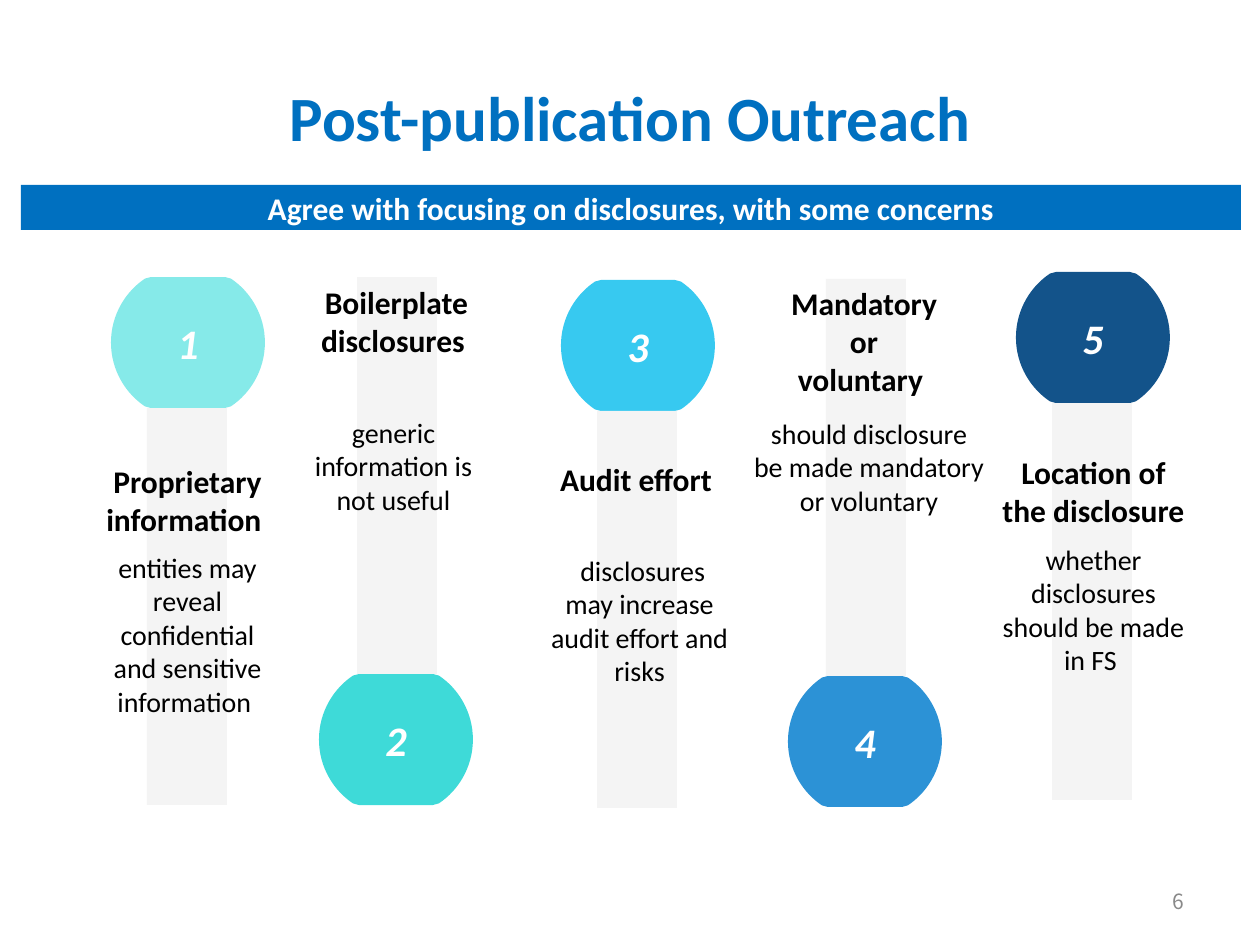
from math import acos, degrees, sqrt

from lxml.etree import SubElement
from pptx import Presentation
from pptx.dml.color import RGBColor as Rgb
from pptx.enum.shapes import MSO_SHAPE as Shape
from pptx.enum.text import MSO_ANCHOR as Anchor, PP_ALIGN as Align
from pptx.oxml.ns import qn
from pptx.util import Emu, Pt

PX = 914400 / 126
BLUE = Rgb(0x00, 0x70, 0xC0)
WHITE = Rgb(0xFF, 0xFF, 0xFF)
BLACK = Rgb(0x00, 0x00, 0x00)
PALE = Rgb(0xF4, 0xF4, 0xF4)
GREY = Rgb(0x89, 0x89, 0x89)
AQUA = Rgb(0x86, 0xEA, 0xE9)
TEAL = Rgb(0x3E, 0xDA, 0xD8)
SKY = Rgb(0x37, 0xC9, 0xF0)
AZURE = Rgb(0x2C, 0x92, 0xD6)
NAVY = Rgb(0x13, 0x53, 0x8A)

RADIUS, DISC_H = 77, 131
FLAT, BEND = 37, 43  # half widths where the flat edge ends and the arc starts
BAR_W, BAR_H = 80, 397

# disc colour, disc left and top, bar below the disc,
# heading and its box, detail and its box
COLUMNS = [
    (AQUA, 111, 277, True,
     "Proprietary information ", (84, 456, 207, 89),
     "entities may reveal confidential and sensitive information ",
     (84, 544, 207, 183)),
    (TEAL, 319, 674, False,
     "Boilerplate disclosures ", (293, 277, 207, 89),
     "generic information is not useful", (290, 409, 207, 115)),
    (SKY, 561, 280, True,
     "Audit effort ", (536, 454, 207, 50),
     " disclosures may increase audit effort and risks", (536, 547, 207, 152)),
    (AZURE, 788, 676, False,
     "Mandatory or voluntary ", (774, 278, 180, 127),
     "should disclosure\vbe made mandatory or voluntary", (741, 410, 256, 115)),
    (NAVY, 1016, 272, True,
     "Location of the disclosure ", (990, 447, 207, 89),
     "whether disclosures should be made in FS ", (990, 536, 207, 149)),
]


def px(*sizes):
    return [Emu(round(size * PX)) for size in sizes]


def paint(shape, color):
    shape.shadow.inherit = False
    shape.fill.solid()
    shape.fill.fore_color.rgb = color
    shape.line.fill.background()


def write(shape, text, size, color, bold=False, italic=False,
          align=Align.CENTER, anchor=Anchor.MIDDLE, face="Calibri"):
    frame = shape.text_frame
    frame.word_wrap = True
    frame.vertical_anchor = anchor
    para = frame.paragraphs[0]
    para.text = text
    para.alignment = align
    font = para.font
    font.name, font.size = face, Pt(size)
    font.bold, font.italic = bold, italic
    font.color.rgb = color


def add_bar(shapes, box, color):
    bar = shapes.add_shape(Shape.RECTANGLE, *px(*box))
    paint(bar, color)
    return bar


def add_note(shapes, box, text, size, bold=False):
    note = shapes.add_textbox(*px(*box))
    write(note, text, size, BLACK, bold, anchor=Anchor.TOP)


def bend(shape):
    """Turn the two corners at the sides into arcs."""
    lines = list(shape.element.iter(qn("a:lnTo")))
    angle = degrees(acos(BEND / RADIUS))
    for side, start in ((2, -angle), (7, 180 - angle)):
        line = lines[side]
        arc = SubElement(line.getparent(), qn("a:arcTo"))
        arc.set("wR", str(round(RADIUS * PX)))
        arc.set("hR", str(round(RADIUS * PX)))
        arc.set("stAng", str(round(start * 60000)))
        arc.set("swAng", str(round(2 * angle * 60000)))
        line.getparent().replace(line, arc)
        end = lines[side + 1]
        end.getparent().remove(end)


def add_disc(shapes, left, top, color, label):
    """Draw a numbered circle trimmed flat at its top and bottom."""
    mid_x, mid_y = left + RADIUS, top + DISC_H / 2
    half, rise = DISC_H / 2, sqrt(RADIUS ** 2 - BEND ** 2)
    right = [(FLAT, -half), (BEND, -rise), (RADIUS, 0),
             (BEND, rise), (FLAT, half)]
    ring = [(-FLAT, -half)] + right
    ring += [(-x, -y) for x, y in right]
    points = [px(mid_x + x, mid_y + y) for x, y in ring[:-1]]
    # The last arc ends on this point, and closing draws the final edge.
    points.append(px(mid_x - BEND, mid_y - rise))
    outline = shapes.build_freeform(*points[0])
    outline.add_line_segments(points[1:], close=True)
    disc = outline.convert_to_shape()
    bend(disc)
    paint(disc, color)
    write(disc, label, 24, WHITE, bold=True, italic=True)


def add_column(slide, number, column):
    color, left, top, below, head, head_box, body, body_box = column
    shapes = slide.shapes.add_group_shape().shapes
    add_disc(shapes, left, top, color, str(number))
    bar_top = top + DISC_H if below else top - BAR_H
    bar_left = left + (36 if below else 38)
    add_bar(shapes, (bar_left, bar_top, BAR_W, BAR_H), PALE)
    add_note(shapes, head_box, head, 18, bold=True)
    add_note(shapes, body_box, body, 16)


def main():
    deck = Presentation()
    deck.slide_width, deck.slide_height = px(1260, 945)
    slide = deck.slides.add_slide(deck.slide_layouts[5])

    title = slide.shapes.title
    title.left, title.top, title.width, title.height = px(63, 38, 1134, 157)
    write(title, "Post-publication Outreach", 36, BLUE, bold=True)

    banner = add_bar(slide.shapes, (21, 185, 1220, 45), BLUE)
    write(banner, "Agree with focusing on disclosures, with some concerns",
          18, WHITE, bold=True)

    for number, column in enumerate(COLUMNS, 1):
        add_column(slide, number, column)

    page = slide.shapes.add_textbox(*px(903, 876, 294, 50))
    write(page, "6", 12, GREY, align=Align.RIGHT, face="Noto Sans CJK JP")
    deck.save("out.pptx")


if __name__ == "__main__":
    main()
